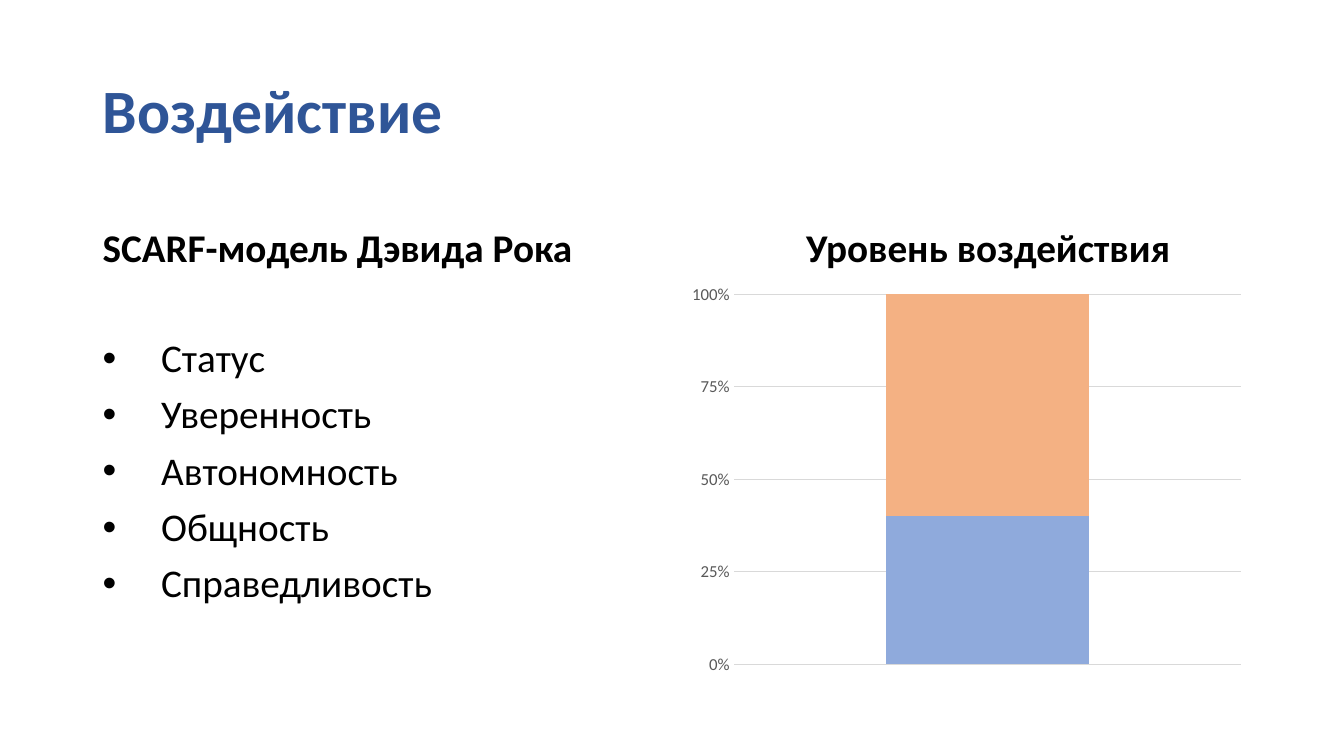
from lxml import etree
from pptx import Presentation
from pptx.chart.data import CategoryChartData
from pptx.dml.color import RGBColor
from pptx.enum.chart import XL_CHART_TYPE as ChartType, XL_TICK_MARK as TickMark
from pptx.enum.text import MSO_ANCHOR as Anchor, PP_ALIGN as Align
from pptx.oxml.ns import qn
from pptx.util import Inches, Pt

BLUE = RGBColor(0x2F, 0x55, 0x97)
BLACK = RGBColor(0, 0, 0)
GRAY = RGBColor(0x59, 0x59, 0x59)
GRID = RGBColor(0xD9, 0xD9, 0xD9)
LOWER = RGBColor(0x8F, 0xAA, 0xDC)
UPPER = RGBColor(0xF4, 0xB1, 0x83)


class SlideBuilder:
    font = "Calibri"
    line_spacing = 0.9
    indent = Inches(0.58)

    def __init__(self, page):
        self.page = page

    def text(self, area, wording, size=28, color=BLACK, bold=False, align=Align.LEFT,
             anchor=Anchor.BOTTOM, before=10):
        box = self.page.shapes.add_textbox(*map(Inches, area))
        frame = box.text_frame
        frame.word_wrap = True
        frame.vertical_anchor = anchor
        frame.text = wording
        for para in frame.paragraphs:
            para.alignment = align
            para.line_spacing = self.line_spacing
            para.space_before = Pt(before)
            for span in para.runs:
                span.font.name = self.font
                span.font.size = Pt(size)
                span.font.bold = bold
                span.font.color.rgb = color
        return frame

    def bullets(self, area, items, top_margin):
        frame = self.text(area, "\n".join(items), anchor=Anchor.TOP)
        frame.margin_top = Inches(top_margin)
        for para in frame.paragraphs:
            properties = para._p.get_or_add_pPr()
            properties.set("marL", str(self.indent))
            properties.set("indent", str(-self.indent))
            etree.SubElement(properties, qn("a:buFont")).set("typeface", "Arial")
            etree.SubElement(properties, qn("a:buChar")).set("char", "•")

    def stacked_column(self, area, category, parts):
        data = CategoryChartData()
        data.categories = [category]
        for name, value, _ in parts:
            data.add_series(name, [value])
        chart = self.page.shapes.add_chart(
            ChartType.COLUMN_STACKED_100, *map(Inches, area), data).chart
        chart.has_legend = False
        chart.has_title = False
        chart.font.name = self.font
        chart.font.size = Pt(10)
        chart.font.color.rgb = BLACK

        # Column fills
        plot = chart.plots[0]
        plot.vary_by_categories = False
        plot.gap_width = 150
        plot.overlap = 100
        for series, (_, _, color) in zip(plot.series, parts):
            series.format.fill.solid()
            series.format.fill.fore_color.rgb = color

        # Axes and grid
        chart.category_axis.visible = False
        axis = chart.value_axis
        axis.minimum_scale, axis.maximum_scale, axis.major_unit = 0, 1, 0.25
        axis.major_tick_mark = axis.minor_tick_mark = TickMark.NONE
        axis.format.line.fill.background()
        axis.major_gridlines.format.line.color.rgb = GRID
        axis.major_gridlines.format.line.width = Pt(0.75)
        labels = axis.tick_labels
        labels.number_format = "0%"
        labels.number_format_is_linked = False
        labels.font.name = self.font
        labels.font.size = Pt(12)
        labels.font.color.rgb = GRAY


def main():
    deck = Presentation()
    deck.slide_width, deck.slide_height = Inches(13.33), Inches(7.5)
    slide = SlideBuilder(deck.slides.add_slide(deck.slide_layouts[6]))

    # Title
    slide.text((0.92, 0.4, 11.5, 1.45), "Воздействие", size=44, color=BLUE, bold=True,
               anchor=Anchor.MIDDLE, before=0)

    # Left column: the model
    slide.text((0.92, 1.84, 5.64, 0.9), "SCARF-модель Дэвида Рока", bold=True)
    slide.bullets((0.92, 2.74, 5.64, 4.03),
                  ["Статус", "Уверенность", "Автономность", "Общность", "Справедливость"],
                  top_margin=0.62)

    # Right column: the level chart
    slide.text((7.18, 1.84, 5.24, 0.9), "Уровень воздействия", bold=True, align=Align.CENTER)
    slide.stacked_column((6.75, 2.74, 5.67, 4.03), "1",
                         [("Series 1", 40, LOWER), ("Series 2", 60, UPPER)])

    deck.save("out.pptx")


if __name__ == "__main__":
    main()
